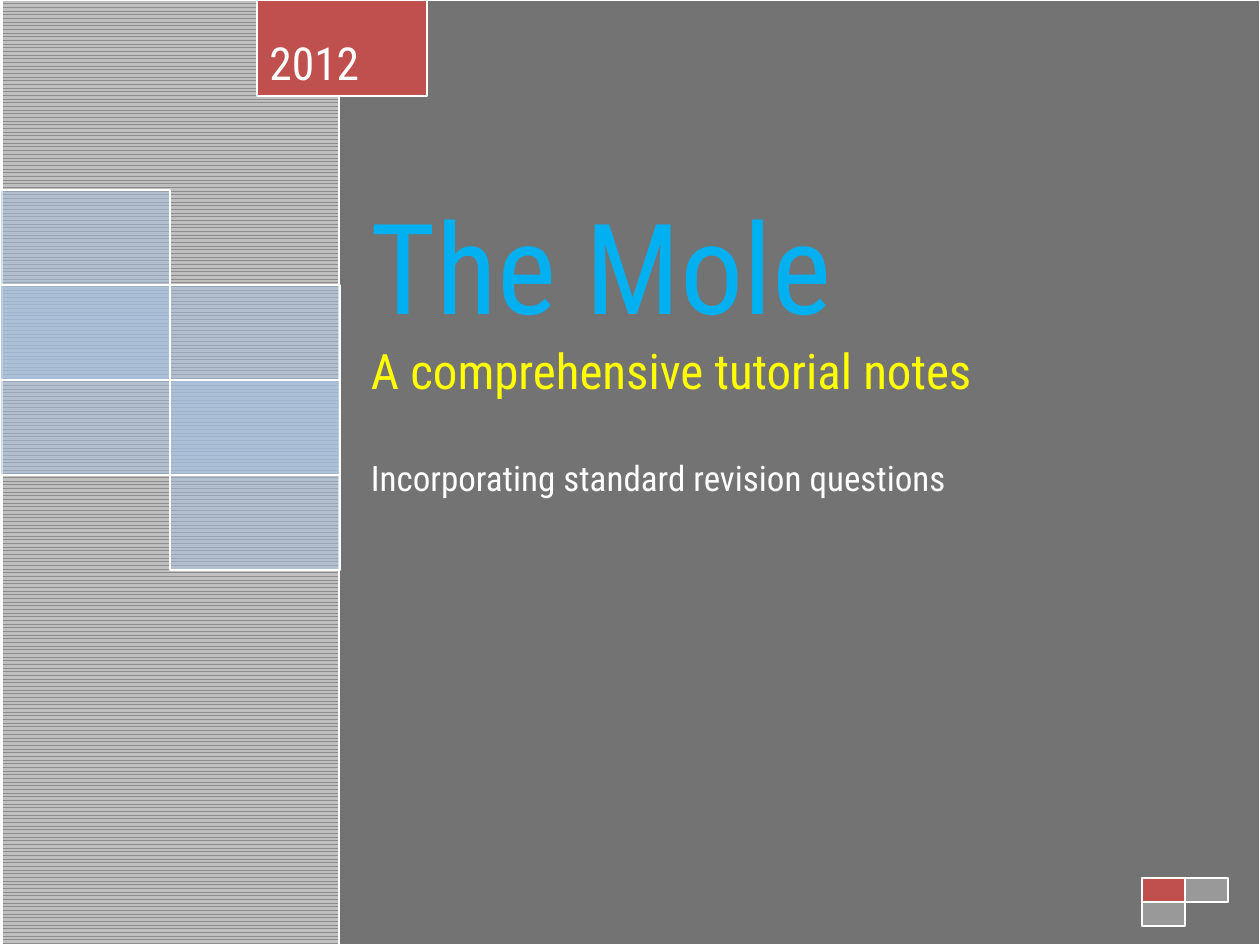
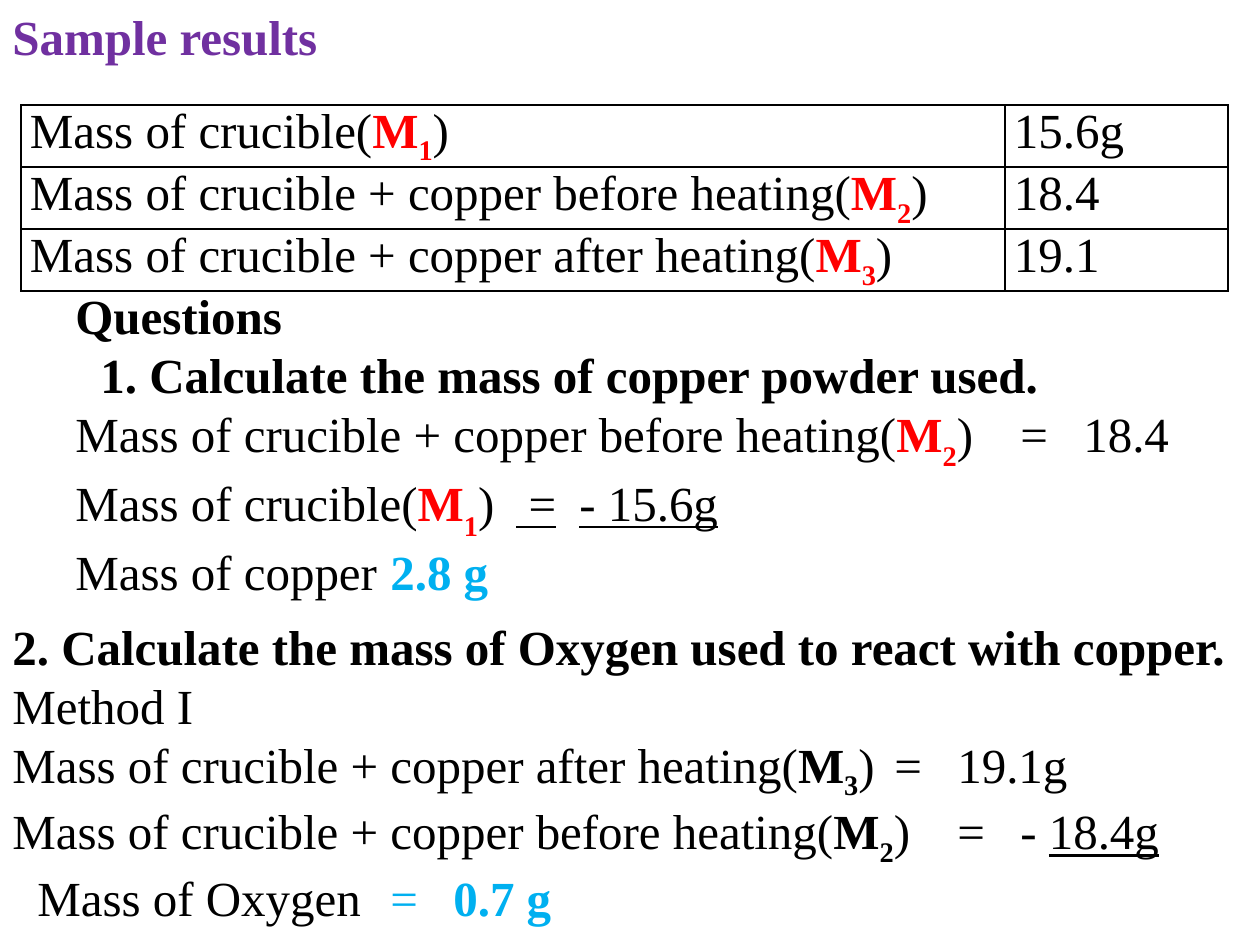
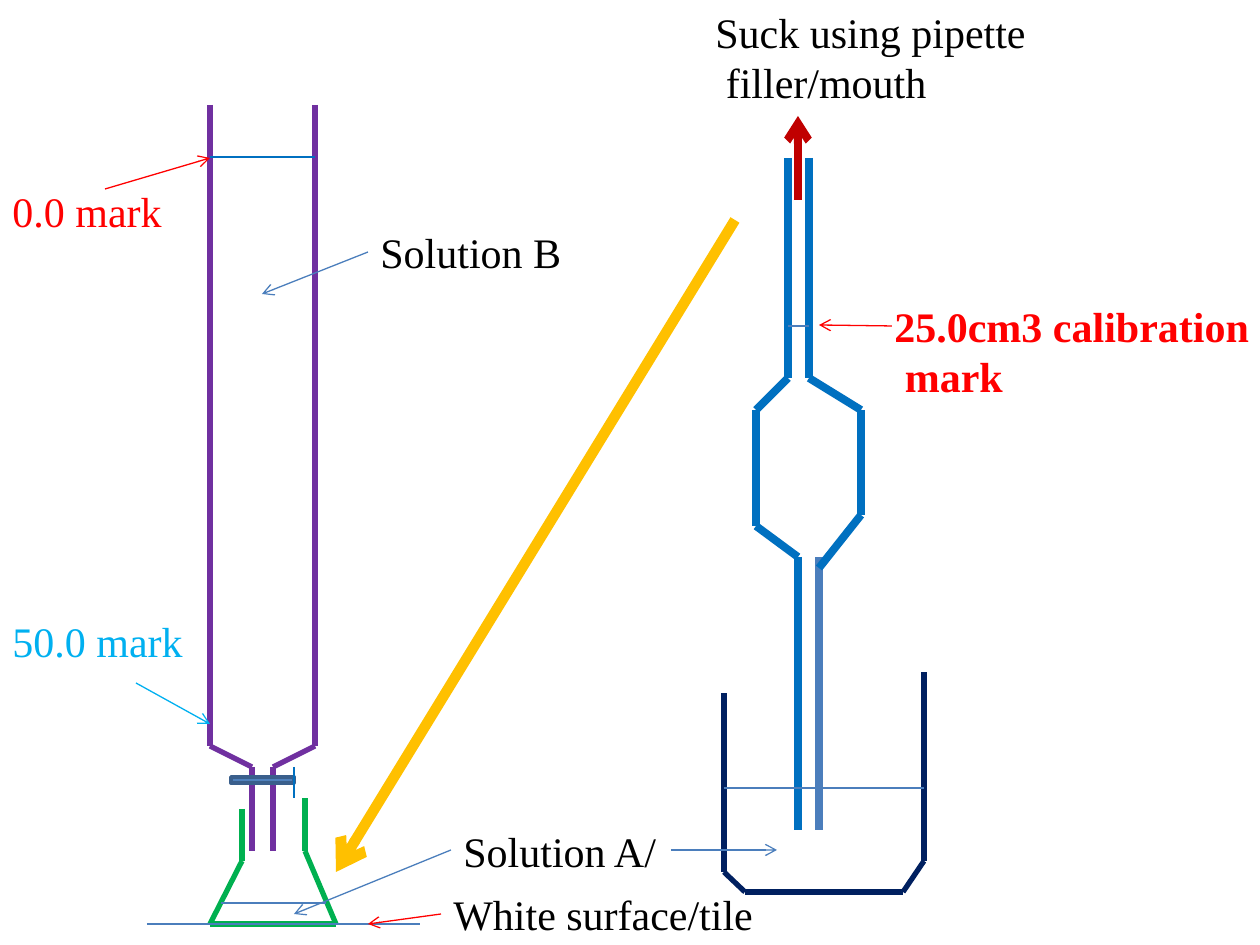
from pptx import Presentation
from pptx.dml.color import RGBColor
from pptx.enum.dml import MSO_PATTERN
from pptx.enum.shapes import MSO_CONNECTOR, MSO_SHAPE
from pptx.enum.text import MSO_ANCHOR, MSO_AUTO_SIZE, PP_ALIGN
from pptx.oxml.ns import qn
from pptx.util import Emu, Pt
from lxml.etree import SubElement

SCALE = 914400 / 126
SANS, SERIF = "Roboto Condensed", "Times New Roman"
BLACK = RGBColor(0, 0, 0)
WHITE = RGBColor(255, 255, 255)
RED = RGBColor(255, 0, 0)
DARK_RED = RGBColor(0xC0, 0, 0)
BRICK = RGBColor(0xC0, 0x50, 0x4D)
YELLOW = RGBColor(255, 255, 0)
AMBER = RGBColor(0xFF, 0xC0, 0)
GREEN = RGBColor(0, 0xB0, 0x50)
CYAN = RGBColor(0, 0xB0, 0xF0)
BLUE = RGBColor(0, 0x70, 0xC0)
STEEL = RGBColor(0x4B, 0x7E, 0xBC)
TAP_FILL = RGBColor(0x4F, 0x81, 0xBD)
TAP_EDGE = RGBColor(0x3A, 0x5F, 0x8C)
NAVY = RGBColor(0, 0x20, 0x60)
PURPLE = RGBColor(0x70, 0x30, 0xA0)
ICE = RGBColor(0xA7, 0xBF, 0xDE)
PANEL = RGBColor(0x73, 0x73, 0x73)
STRIPE = RGBColor(0x8C, 0x8C, 0x8C)
SILVER = RGBColor(0xBF, 0xBF, 0xBF)


def px(n):
    """Turn pixels into EMU."""
    return Emu(round(n * SCALE))


def write(p, runs, **base):
    """Fill a paragraph with (text, format) runs over a base format."""
    for text, extra in runs:
        r = p.add_run()
        r.text = text
        for key, value in {**base, **extra}.items():
            if key == "color":
                r.font.color.rgb = value
            elif key == "sub":
                r._r.get_or_add_rPr().set("baseline", str(-1000 * value))
            else:
                setattr(r.font, key, value)


def layout(p, indent, stops):
    """Set a first-line indent and left tab stops."""
    pPr = p._p.get_or_add_pPr()
    pPr.set("marL", "0")
    pPr.set("indent", str(px(indent)))
    if stops:
        tabs = SubElement(pPr, qn("a:tabLst"))
        for stop in stops:
            SubElement(tabs, qn("a:tab"), pos=str(px(stop)), algn="l")


def rect(s, x, y, w, h, color, edge=WHITE, width=1, alpha=100):
    """Draw an outlined rectangle with an optional transparent fill."""
    sp = s.shapes.add_shape(MSO_SHAPE.RECTANGLE, px(x), px(y), px(w), px(h))
    sp.shadow.inherit = False
    sp.fill.solid()
    sp.fill.fore_color.rgb = color
    sp.line.color.rgb = edge
    sp.line.width = Pt(width)
    if alpha < 100:
        clr = sp._element.spPr.find(qn("a:solidFill"))[0]
        SubElement(clr, qn("a:alpha"), val=str(alpha * 1000))
    return sp


def path_line(s, x, y, points, color, width=0.75, arrow=False):
    """Join successive points, given from x and y, by straight connectors."""
    for (x1, y1), (x2, y2) in zip(points, points[1:]):
        c = s.shapes.add_connector(MSO_CONNECTOR.STRAIGHT, px(x + x1), px(y + y1),
                                   px(x + x2), px(y + y2))
        c.line.color.rgb = color
        c.line.width = Pt(width)
        if arrow:
            SubElement(c.line._get_or_add_ln(), qn("a:tailEnd"), type="arrow")
        SubElement(c._element.spPr, qn("a:effectLst"))


def text_box(s, x, y, w, h, wrap=False, anchor=MSO_ANCHOR.TOP):
    """Add a growing text box and return its frame."""
    tf = s.shapes.add_textbox(px(x), px(y), px(w), px(h)).text_frame
    tf.word_wrap = wrap
    tf.vertical_anchor = anchor
    tf.auto_size = MSO_AUTO_SIZE.SHAPE_TO_FIT_TEXT
    return tf


def label(s, x, y, w, lines, color=BLACK, wrap=False, bold=False):
    """Write a label, one paragraph a line."""
    tf = text_box(s, x, y, w, 12 + 51 * len(lines), wrap)
    for i, line in enumerate(lines):
        p = tf.add_paragraph() if i else tf.paragraphs[0]
        write(p, [(line, {})], size=Pt(24), name=SERIF, color=color, bold=bold)


def title_panel(s, x, y, w, h):
    """Draw the dark panel with the title lines."""
    sp = rect(s, x, y, w, h, PANEL)
    tf = sp.text_frame
    tf.word_wrap = True
    tf.vertical_anchor = MSO_ANCHOR.TOP
    margins = {"margin_left": 32, "margin_top": 189, "margin_right": 63, "margin_bottom": 6}
    for key, value in margins.items():
        setattr(tf, key, px(value))
    lines = [("The Mole", 72, CYAN, 0), ("A comprehensive tutorial notes", 28, YELLOW, 0),
             ("Incorporating standard revision questions", 20, WHITE, 33)]
    for i, (text, size, color, before) in enumerate(lines):
        p = tf.add_paragraph() if i else tf.paragraphs[0]
        p.alignment = PP_ALIGN.LEFT
        p.space_before = Pt(before)
        write(p, [(text, {})], size=Pt(size), name=SANS, color=color)


def tiles(s, x, y, w, h, cells):
    """Lay tiles on a grid from (column, row, colour, alpha) cells."""
    for col, row, color, alpha in cells:
        rect(s, x + col * w, y + row * h, w, h, color, alpha=alpha)


def year_tab(s, x, y, w, h):
    """Draw the red year tab."""
    tf = rect(s, x, y, w, h, BRICK).text_frame
    tf.vertical_anchor = MSO_ANCHOR.BOTTOM
    p = tf.paragraphs[0]
    p.alignment = PP_ALIGN.LEFT
    write(p, [("2012", {})], size=Pt(26), name=SANS, color=WHITE)


def cover(s):
    """Build the cover slide."""
    strip = rect(s, 2, 0, 1258, 945, SILVER)
    strip.fill.patterned()
    strip.fill.pattern = MSO_PATTERN.ZIG_ZAG
    strip.fill.fore_color.rgb = STRIPE
    strip.fill.back_color.rgb = SILVER
    title_panel(s, 339, 0, 921, 945)
    tiles(s, 0, 190, 170, 95, [(1, 2, ICE, 80), (1, 1, ICE, 50), (0, 1, ICE, 80),
                               (0, 0, ICE, 50), (0, 2, ICE, 50), (1, 3, ICE, 50)])
    year_tab(s, 257, 0, 170, 96)
    tiles(s, 1142, 878, 43, 24, [(0, 1, SILVER, 50), (0, 0, BRICK, 100), (1, 0, SILVER, 50)])


def mass(text, n, tail="", sub=25, color=RED):
    """Return the runs for a text that ends with a mass symbol in brackets."""
    symbol = {"bold": True, "color": color}
    return [(text + "(", {}), ("M", symbol), (n, {**symbol, "sub": sub}), (")" + tail, {})]


def results_table(s, x, y, widths, row_height):
    """Build the table of weighings."""
    rows = [(mass("Mass of crucible", "1"), "15.6g"),
            (mass("Mass of crucible + copper before heating", "2"), "18.4"),
            (mass("Mass of crucible + copper after heating", "3"), "19.1")]
    table = s.shapes.add_table(len(rows), 2, px(x), px(y), px(sum(widths)),
                               px(row_height * len(rows))).table
    table.first_row = table.horz_banding = False
    for column, width in zip(table.columns, widths):
        column.width = px(width)
    for i, (runs, value) in enumerate(rows):
        for j, content in enumerate((runs, [(value, {})])):
            cell = table.cell(i, j)
            cell.margin_left = cell.margin_right = px(9)
            cell.margin_top = cell.margin_bottom = 0
            write(cell.text_frame.paragraphs[0], content, size=Pt(28), name=SERIF, color=BLACK)
            tcPr = cell._tc.get_or_add_tcPr()
            for side in ("a:lnL", "a:lnR", "a:lnT", "a:lnB"):
                ln = SubElement(tcPr, qn(side), w="12700")
                fill = SubElement(ln, qn("a:solidFill"))
                SubElement(fill, qn("a:srgbClr"), val=str(BLACK))
            cell.fill.background()


def working(s, x, y, w, h):
    """Write the questions with their worked answers."""
    bold, under = {"bold": True}, {"underline": True}
    answer = {"bold": True, "color": CYAN}
    before = "Mass of crucible + copper before heating"
    lines = [
        (63, [], [("Questions", bold)]),
        (88, [], [("1. Calculate the mass of copper powder used.", bold)]),
        (63, [1010, 1099], mass(before, "2", "\t=\t18.4", 30)),
        (63, [1016, 1081], mass("Mass of crucible", "1", "\t", 30) + [(" =\t- 15.6g", under)]),
        (63, [1106], [("Mass of copper\t", {}), ("2.8 g", answer)]),
        (0, [], [("2. Calculate the mass of Oxygen used to react with copper.", bold)]),
        (0, [], [("Method I", {})]),
        (0, [948, 1025], mass("Mass of crucible + copper after heating", "3",
                              "\t=\t19.1g", color=BLACK)),
        (0, [947, 999], mass(before, "2", "\t=\t- ", color=BLACK) + [("18.4g", under)]),
        (25, [997, 1061], [("Mass of Oxygen\t", {}), ("=\t", {"color": CYAN}),
                           ("0.7 g", answer)]),
    ]
    tf = text_box(s, x, y, w, h, True, MSO_ANCHOR.MIDDLE)
    for i, (indent, stops, runs) in enumerate(lines):
        p = tf.add_paragraph() if i else tf.paragraphs[0]
        p.space_before = Pt(9 if i == 5 else 0)
        layout(p, indent, stops)
        write(p, runs, size=Pt(28), name=SERIF, color=BLACK)


def sample_results(s):
    """Build the slide of sample results."""
    results_table(s, 21, 105, (984, 223), 56)
    working(s, 0, 294, 1260, 624)
    tf = text_box(s, 0, 0, 334, 72, anchor=MSO_ANCHOR.MIDDLE)
    write(tf.paragraphs[0], [("Sample results", {})], size=Pt(28), name=SERIF,
          color=PURPLE, bold=True)


def burette(s, x, y):
    """Draw the burette and its tap."""
    path_line(s, x, y, [(0, 0), (0, 641), (42, 662), (42, 746)], PURPLE, 3)
    path_line(s, x, y, [(105, 0), (105, 641), (63, 662), (63, 746)], PURPLE, 3)
    rect(s, x + 21, y + 672, 63, 6, TAP_FILL, TAP_EDGE, 2)
    path_line(s, x, y, [(84, 662), (84, 693)], BLUE)
    path_line(s, x, y, [(0, 52), (105, 52)], BLUE)


def flask(s, x, y):
    """Draw the conical flask on its tile."""
    path_line(s, x, y, [(32, 11), (32, 63), (0, 126), (126, 126), (95, 53), (95, 0)], GREEN, 3)
    path_line(s, x, y, [(11, 105), (116, 105)], STEEL)
    path_line(s, x, y, [(-63, 126), (210, 126)], STEEL)


def pipette(s, x, y):
    """Draw the pipette, its calibration line and the suction arrow."""
    path_line(s, x, y, [(32, 0), (32, 220), (0, 252), (0, 368), (42, 399), (42, 672)], BLUE, 4.5)
    path_line(s, x, y, [(63, 399), (63, 672)], STEEL, 4.5)
    path_line(s, x, y, [(53, 0), (53, 220), (105, 252), (105, 357), (63, 410)], BLUE, 4.5)
    path_line(s, x, y, [(32, 168), (53, 168)], STEEL)
    path_line(s, x, y, [(42, 42), (42, -42)], DARK_RED, 4.5, True)


def beaker(s, x, y):
    """Draw the beaker and its liquid level."""
    path_line(s, x, y, [(0, 21), (0, 200), (21, 220), (179, 220), (200, 189), (200, 0)], NAVY, 3)
    path_line(s, x, y, [(0, 116), (200, 116)], STEEL)


def titration(s):
    """Build the titration apparatus slide."""
    burette(s, 210, 105)
    flask(s, 210, 798)
    pipette(s, 756, 158)
    beaker(s, 724, 672)
    path_line(s, 0, 0, [(735, 220), (336, 872)], AMBER, 6, True)
    pointers = [((671, 850), (777, 850), STEEL), ((451, 850), (294, 914), STEEL),
                ((368, 252), (262, 294), STEEL), ((105, 189), (210, 158), RED),
                ((136, 683), (210, 724), CYAN), ((441, 914), (368, 924), RED),
                ((892, 326), (819, 325), RED)]
    for start, end, color in pointers:
        path_line(s, 0, 0, [start, end], color, arrow=True)
    label(s, 703, 0, 339, ["Suck using pipette", " filler/mouth"])
    label(s, 451, 819, 219, ["Solution A/"])
    label(s, 368, 220, 208, ["Solution B"])
    label(s, 0, 179, 176, ["0.0 mark"], RED)
    label(s, 0, 609, 198, ["50.0 mark"], CYAN)
    label(s, 441, 882, 328, ["White surface/tile"])
    label(s, 882, 294, 404, ["25.0cm3 calibration", " mark"], RED, True, True)


def main():
    """Build and save the presentation."""
    prs = Presentation()
    prs.slide_width, prs.slide_height = px(1260), px(945)
    for build in (cover, sample_results, titration):
        build(prs.slides.add_slide(prs.slide_layouts[6]))
    prs.save("out.pptx")


if __name__ == "__main__":
    main()
